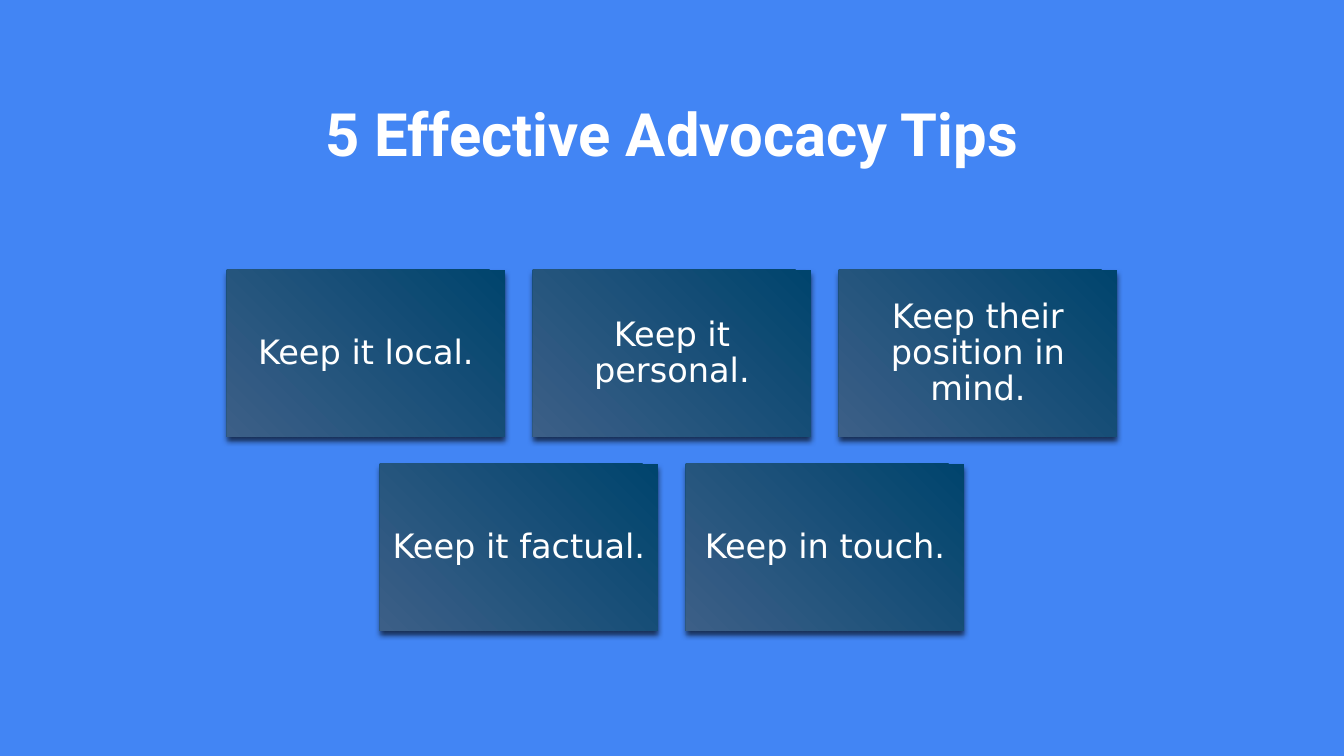
"""Build the advocacy tips slide: a heading above two centred rows of cards."""
import lxml.etree
import pptx
import pptx.dml.color
import pptx.enum.shapes
import pptx.enum.text
import pptx.oxml
import pptx.oxml.ns
import pptx.util

HEADING = "5 Effective Advocacy Tips"
TIP_ROWS = [
    ["Keep it local.", "Keep it personal.", "Keep their position in mind."],
    ["Keep it factual.", "Keep in touch."],
]

SLIDE_W, SLIDE_H = 1344, 756
HEADING_BOX = (120, 36, 1104, 194)
CARD_W, CARD_H = 278, 167
GAP_X, GAP_Y = 28, 27
CARDS_TOP = 270
BACKGROUND, WHITE = "4285F4", "FFFFFF"
CARD_GRADIENT = ["3C5F87", "00446D"]
HEADING_FONT = {"name": "Roboto", "size": pptx.util.Pt(32), "bold": True}
TIP_FONT = {"name": "DejaVu Sans", "size": pptx.util.Pt(18), "bold": False}
HEADING_INSETS = {"margin_left": 9, "margin_right": 9, "margin_top": 5, "margin_bottom": 5}
TIP_INSETS = {"margin_left": 9, "margin_right": 9, "margin_top": 9, "margin_bottom": 9}

NS = pptx.oxml.ns.nsdecls("a")
GRADIENT_PATH = (
    f'<a:path {NS} path="circle">'
    '<a:fillToRect l="0" t="100000" r="100000" b="0"/></a:path>'
)
CARD_SHADOW = (
    f'<a:outerShdw {NS} blurRad="38100" dist="25400" dir="5400000" rotWithShape="0">'
    '<a:srgbClr val="000000"><a:alpha val="64000"/></a:srgbClr></a:outerShdw>'
)


def px(length):
    return pptx.util.Emu(round(length * 914400 / 134.4))


def rgb(value):
    return pptx.dml.color.RGBColor.from_string(value)


def write(shape, wording, font, insets, line_spacing):
    frame = shape.text_frame
    frame.word_wrap = True
    frame.vertical_anchor = pptx.enum.text.MSO_ANCHOR.MIDDLE
    for side, inset in insets.items():
        setattr(frame, side, px(inset))
    paragraph = frame.paragraphs[0]
    paragraph.alignment = pptx.enum.text.PP_ALIGN.CENTER
    paragraph.line_spacing = line_spacing
    run = paragraph.add_run()
    run.text = wording
    for attribute, value in font.items():
        setattr(run.font, attribute, value)
    run.font.color.rgb = rgb(WHITE)


def add_card(slide, left, top, tip):
    card = slide.shapes.add_shape(
        pptx.enum.shapes.MSO_SHAPE.RECTANGLE, px(left), px(top), px(CARD_W), px(CARD_H)
    )
    card.fill.gradient()
    for stop, colour in zip(card.fill.gradient_stops, CARD_GRADIENT):
        stop.color.rgb = rgb(colour)
    card.line.fill.background()
    card.shadow.inherit = False
    properties = card.element.spPr
    direction = properties.find(".//" + pptx.oxml.ns.qn("a:lin"))
    direction.getparent().replace(direction, lxml.etree.fromstring(GRADIENT_PATH))
    effects = properties.find(pptx.oxml.ns.qn("a:effectLst"))
    effects.append(lxml.etree.fromstring(CARD_SHADOW))
    write(card, tip, TIP_FONT, TIP_INSETS, 0.9)


def main():
    deck = pptx.Presentation()
    deck.slide_width, deck.slide_height = px(SLIDE_W), px(SLIDE_H)
    slide = deck.slides.add_slide(deck.slide_layouts[6])
    slide.background.fill.solid()
    slide.background.fill.fore_color.rgb = rgb(BACKGROUND)
    heading = slide.shapes.add_textbox(*map(px, HEADING_BOX))
    write(heading, HEADING, HEADING_FONT, HEADING_INSETS, 1.0)
    for row, tips in enumerate(TIP_ROWS):
        row_width = len(tips) * (CARD_W + GAP_X) - GAP_X
        row_left = (SLIDE_W - row_width) // 2
        top = CARDS_TOP + row * (CARD_H + GAP_Y)
        for column, tip in enumerate(tips):
            add_card(slide, row_left + column * (CARD_W + GAP_X), top, tip)
    deck.save("out.pptx")


if __name__ == "__main__":
    main()
